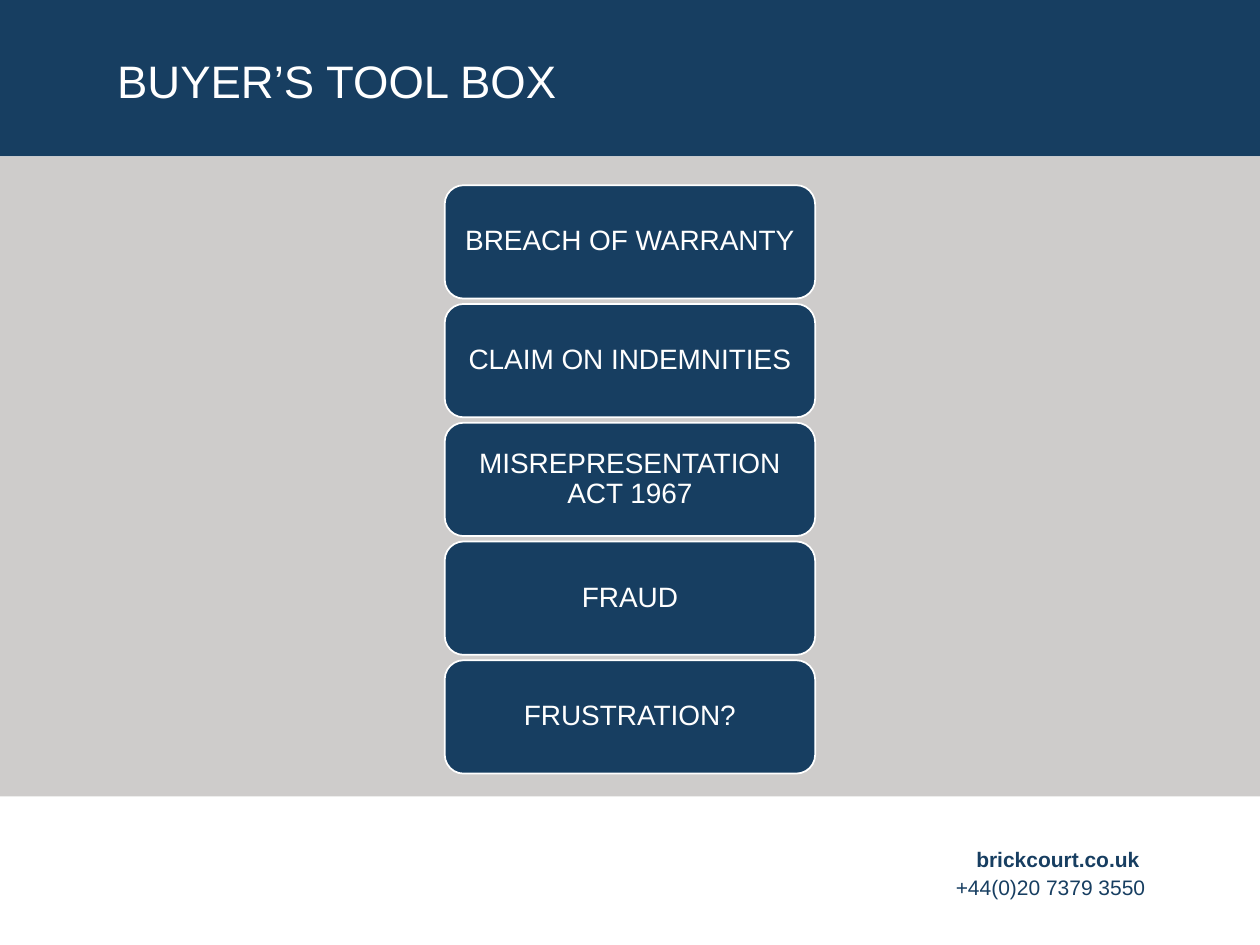
from pptx import Presentation
from pptx.dml.color import RGBColor
from pptx.enum.shapes import MSO_SHAPE
from pptx.enum.text import MSO_ANCHOR, PP_ALIGN
from pptx.util import Inches, Pt

RECTANGLE, ROUNDED = MSO_SHAPE.RECTANGLE, MSO_SHAPE.ROUNDED_RECTANGLE
LEFT, CENTER, RIGHT = PP_ALIGN.LEFT, PP_ALIGN.CENTER, PP_ALIGN.RIGHT
MIDDLE = MSO_ANCHOR.MIDDLE

NAVY, GREY, WHITE = "173E61", "CECCCB", "FFFFFF"
SLIDE_W, SLIDE_H = 10, 7.5
HEADER_H, BODY_H = 1.24, 5.08

TITLE = "BUYER’S TOOL BOX"
REMEDIES = [
    "BREACH OF WARRANTY",
    "CLAIM ON INDEMNITIES",
    "MISREPRESENTATION ACT 1967",
    "FRAUD",
    "FRUSTRATION?",
]
CONTACT = [("brickcourt.co.uk ", True), ("+44(0)20 7379 3550", False)]

REMEDY_W, REMEDY_H = 2.94, 0.9
FIRST_TOP, LAST_TOP = 1.47, 5.24


def rgb(value):
    return RGBColor.from_string(value)


def add_block(slide, kind, box, fill, outline=None):
    block = slide.shapes.add_shape(kind, *map(Inches, box))
    block.shadow.inherit = False
    block.fill.solid()
    block.fill.fore_color.rgb = rgb(fill)
    if outline:
        block.line.color.rgb = rgb(outline)
        block.line.width = Pt(1)
    else:
        block.line.fill.background()
    return block


def write(shape, lines, size, color, align, spacing, margins=(0.1, 0.05)):
    """Fill a shape with (text, bold) lines; margins are horizontal, vertical."""
    frame = shape.text_frame
    across, down = map(Inches, margins)
    settings = {
        "word_wrap": True, "vertical_anchor": MIDDLE,
        "margin_left": across, "margin_right": across,
        "margin_top": down, "margin_bottom": down,
    }
    for name, value in settings.items():
        setattr(frame, name, value)
    for index, (text, bold) in enumerate(lines):
        paragraph = frame.add_paragraph() if index else frame.paragraphs[0]
        paragraph.alignment = align
        paragraph.line_spacing = spacing
        run = paragraph.add_run()
        run.text = text
        for name, value in {"name": "Arial", "size": Pt(size), "bold": bold}.items():
            setattr(run.font, name, value)
        run.font.color.rgb = rgb(color)


def main():
    deck = Presentation()
    deck.slide_width, deck.slide_height = Inches(SLIDE_W), Inches(SLIDE_H)
    slide = deck.slides.add_slide(deck.slide_layouts[6])

    add_block(slide, RECTANGLE, (0, HEADER_H, SLIDE_W, BODY_H), GREY)
    add_block(slide, RECTANGLE, (0, 0, SLIDE_W, HEADER_H), NAVY)

    contact = add_block(slide, RECTANGLE, (5.81, 6.72, 3.38, 0.4), WHITE)
    write(contact, CONTACT, 12, NAVY, RIGHT, Pt(16))

    title = slide.shapes.add_textbox(*map(Inches, (0.93, 0.4, 8.13, 0.53)))
    write(title, [(TITLE, False)], 26, WHITE, LEFT, 0.9, (0, 0))

    remedy_left = (SLIDE_W - REMEDY_W) / 2
    step = (LAST_TOP - FIRST_TOP) / (len(REMEDIES) - 1)
    for row, remedy in enumerate(REMEDIES):
        box = (remedy_left, FIRST_TOP + row * step, REMEDY_W, REMEDY_H)
        card = add_block(slide, ROUNDED, box, NAVY, WHITE)
        write(card, [(remedy, False)], 16, WHITE, CENTER, 0.9, (0.07, 0.03))

    deck.save("out.pptx")


if __name__ == "__main__":
    main()
